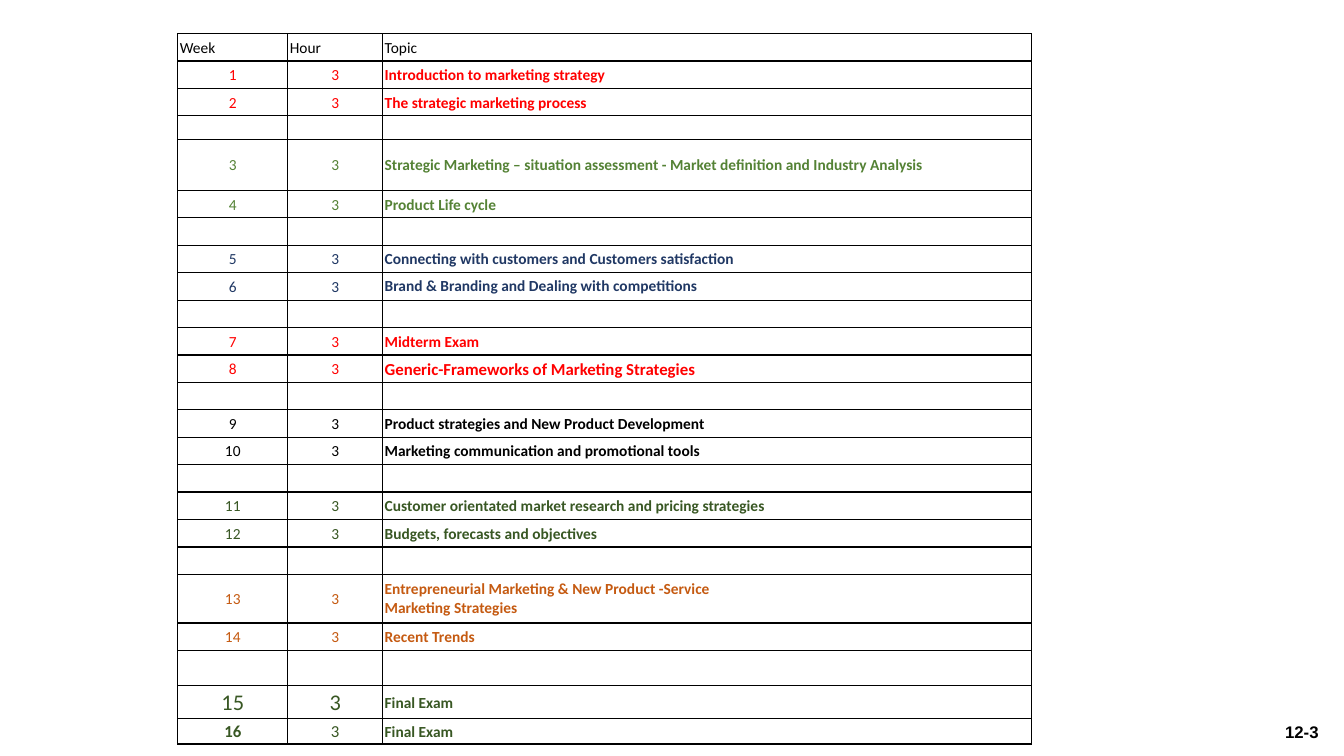
from lxml import etree
from pptx import Presentation
from pptx import util as u
from pptx.dml import color
from pptx.enum import text
from pptx.oxml import ns

MID, LEFT, RIGHT = text.PP_ALIGN.CENTER, text.PP_ALIGN.LEFT, text.PP_ALIGN.RIGHT
SPACED = {"line_spacing": 1.07, "space_after": u.Pt(8)}
TIGHT = {}
INSET = {"margin_" + side: u.Pt(1.44) for side in ("left", "right", "top", "bottom")}
WIDTHS = [78.6, 67.8, 463.5]
PITCH = 19.6
HEIGHTS = {3: 16.6, 4: 36.7, 19: 34.8, 21: 25.2, 22: 23, 23: 18}

PARTS = [
    ("FF0000", ["Introduction to marketing strategy", "The strategic marketing process"]),
    ("548235", ["Strategic Marketing – situation assessment - Market definition and Industry Analysis",
                "Product Life cycle"]),
    ("203864", ["Connecting with customers and Customers satisfaction",
                "Brand & Branding and Dealing with competitions"]),
    ("FF0000", ["Midterm Exam", "Generic-Frameworks of Marketing Strategies"]),
    ("000000", ["Product strategies and New Product Development",
                "Marketing communication and promotional tools"]),
    ("385723", ["Customer orientated market research and pricing strategies",
                "Budgets, forecasts and objectives"]),
    ("C55A11", ["Entrepreneurial Marketing & New Product -Service\nMarketing Strategies", "Recent Trends"]),
    ("385723", ["Final Exam", "Final Exam"]),
]
CLOSE = {5, 6, 13, 14}
NUM_SIZE = {15: 16, 16: 12}
TOPIC_SIZE = {8: 12}


def rgb(code):
    return color.RGBColor.from_string(code)


def apply(obj, fmt):
    for key, val in fmt.items():
        setattr(obj, key, val)


def write(frame, words, tone, size=11, bold=False, face="Calibri", align=LEFT, gaps=TIGHT):
    for i, line in enumerate(words.split("\n")):
        para = frame.add_paragraph() if i else frame.paragraphs[0]
        apply(para, {"alignment": align, **gaps})
        run = para.add_run()
        run.text = line
        apply(run.font, {"name": face, "size": u.Pt(size), "bold": bold})
        run.font.color.rgb = rgb(tone)


def frame_cell(cell):
    apply(cell, {"vertical_anchor": text.MSO_ANCHOR.MIDDLE, **INSET})
    props = cell._tc.get_or_add_tcPr()
    for side in "LRTB":
        line = etree.SubElement(props, ns.qn("a:ln" + side), w=str(u.Pt(1)))
        fill = etree.SubElement(line, ns.qn("a:solidFill"))
        etree.SubElement(fill, ns.qn("a:srgbClr"), val="000000")
    cell.fill.background()


def plan():
    rows = [[(head, {"tone": "000000", "gaps": SPACED}) for head in ("Week", "Hour", "Topic")]]
    week = 0
    for tone, topics in PARTS:
        if week:
            rows.append([])
        for topic in topics:
            week += 1
            num = {"tone": tone, "size": NUM_SIZE.get(week, 11), "align": MID, "gaps": SPACED}
            name = {"tone": tone, "size": TOPIC_SIZE.get(week, 11), "bold": True,
                    "gaps": TIGHT if week in CLOSE else SPACED}
            rows.append([(str(week), {**num, "bold": week == 16}), ("3", num), (topic, name)])
    return rows


def add_plan(slide, left, top):
    rows = plan()
    highs = [HEIGHTS.get(i, PITCH) for i in range(len(rows))]
    box = [u.Pt(n) for n in (left, top, sum(WIDTHS), sum(highs))]
    grid = slide.shapes.add_table(len(rows), len(WIDTHS), *box).table
    apply(grid, {"first_row": False, "horz_banding": False})
    for col, wide in zip(grid.columns, WIDTHS):
        col.width = u.Pt(wide)
    for row, high, items in zip(grid.rows, highs, rows):
        row.height = u.Pt(high)
        for i, cell in enumerate(row.cells):
            frame_cell(cell)
            if items:
                words, fmt = items[i]
                write(cell.text_frame, words, **fmt)
            else:
                para = cell.text_frame.paragraphs[0]._p
                etree.SubElement(para, ns.qn("a:endParaRPr"), sz="1100")


def add_page(slide, left, top, wide, high):
    box = slide.shapes.add_textbox(*[u.Pt(n) for n in (left, top, wide, high)])
    box.text_frame.word_wrap = True
    write(box.text_frame, "12-3", "000000", size=12, bold=True, face="Arial", align=RIGHT)


def main():
    deck = Presentation()
    apply(deck, {"slide_width": u.Pt(960), "slide_height": u.Pt(540)})
    slide = deck.slides.add_slide(deck.slide_layouts[6])
    add_page(slide, 864, 512, 85, 21.6)
    add_plan(slide, 127, 24)
    deck.save("out.pptx")


if __name__ == "__main__":
    main()
